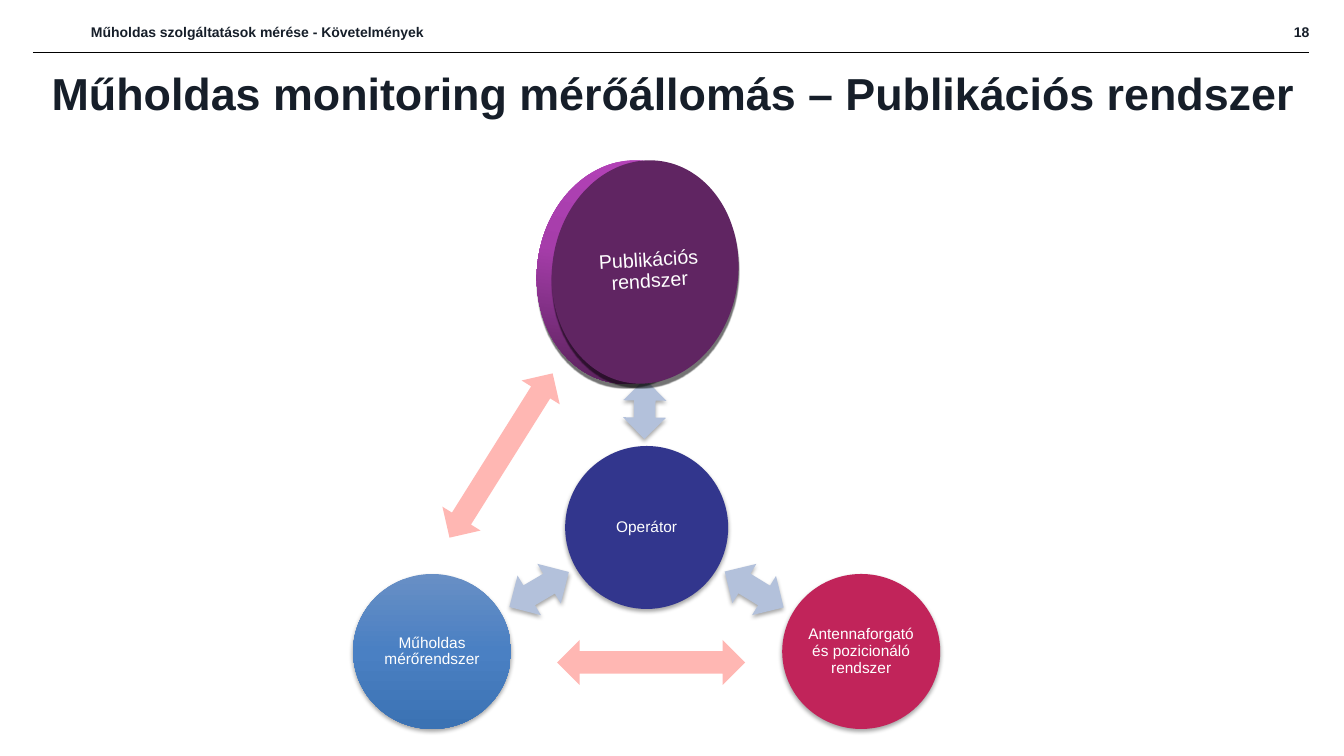
from lxml import etree
from pptx import Presentation
from pptx import util as u
from pptx.dml.color import RGBColor
from pptx.enum import shapes, text
from pptx.oxml import ns

SCALE = 914400 / 100.8  # EMU per px
FONT = "Arial"
COLORS = {
    "ink": "161E29", "rule": "000000", "white": "FFFFFF", "operator": "32368D",
    "antenna": "C1245A", "disc": "602562", "link": "B3C1DB", "flow": "FFB7B3",
}
MEASURING = [(0, "688FC5"), (50, "4A80C3"), (100, "3B72B3")]
DISC_EDGE = [(0, "B543BA"), (45, "A63DAA"), (100, "4F1E51")]
SOFT_SHADOW = {"blurRad": 39000, "dist": 23000, "alpha": 35000}
DISC_SHADOW = {"blurRad": 6000, "dist": 42000, "alpha": 55000}

presentation = Presentation()
presentation.slide_width = u.Inches(13.33)
presentation.slide_height = u.Inches(7.5)
slide = presentation.slides.add_slide(presentation.slide_layouts[6])


def add_part(kind, box, fill, shadow=None, rotation=0):
    """Add a borderless shape with a solid or gradient fill and optional shadow."""
    shape = slide.shapes.add_shape(kind, *(round(px * SCALE) for px in box))
    shape.rotation = rotation
    shape.line.fill.background()
    shape.shadow.inherit = False
    if isinstance(fill, list):
        shape.fill.gradient()
        shape.fill.gradient_angle = 270
        stops = shape.element.spPr.find(".//" + ns.qn("a:gsLst"))
        for stop in list(stops):
            stops.remove(stop)
        for position, color in fill:
            stop = etree.SubElement(stops, ns.qn("a:gs"), pos=str(position * 1000))
            etree.SubElement(stop, ns.qn("a:srgbClr"), val=color)
    else:
        shape.fill.solid()
        shape.fill.fore_color.rgb = RGBColor.from_string(COLORS[fill])
    if shadow:
        effects = shape.element.spPr.find(ns.qn("a:effectLst"))
        outer = etree.SubElement(
            effects, ns.qn("a:outerShdw"), blurRad=str(shadow["blurRad"]),
            dist=str(shadow["dist"]), dir="5400000", rotWithShape="0")
        color = etree.SubElement(outer, ns.qn("a:srgbClr"), val="000000")
        etree.SubElement(color, ns.qn("a:alpha"), val=str(shadow["alpha"]))
    return shape


def write(shape, words, size, color, align="CENTER", bold=False, margin=0, spacing=1.0):
    """Put one formatted paragraph into a shape or text box."""
    frame = shape.text_frame
    settings = {"word_wrap": True, "vertical_anchor": text.MSO_ANCHOR.MIDDLE}
    for side in ("left", "top", "right", "bottom"):
        settings["margin_" + side] = round(margin * SCALE)
    for name, value in settings.items():
        setattr(frame, name, value)
    paragraph = frame.paragraphs[0]
    paragraph.text = words
    paragraph.alignment = getattr(text.PP_ALIGN, align)
    paragraph.line_spacing = spacing
    font = paragraph.runs[0].font
    for name, value in {"name": FONT, "size": u.Pt(size), "bold": bold}.items():
        setattr(font, name, value)
    font.color.rgb = RGBColor.from_string(COLORS[color])


# Header rule
rule = slide.shapes.add_connector(
    shapes.MSO_CONNECTOR.STRAIGHT, *(round(px * SCALE) for px in (33, 53, 1309, 53)))
rule.line.color.rgb = RGBColor.from_string(COLORS["rule"])
rule.line.width = u.Pt(0.75)
etree.SubElement(rule.element.spPr, ns.qn("a:effectLst"))

# Header, page number and title
for words, box, size, align in [
    ("Műholdas szolgáltatások mérése - Követelmények", (91, 12, 454, 40), 10, "LEFT"),
    ("18", (1007, 12, 302, 40), 10, "RIGHT"),
    ("Műholdas monitoring mérőállomás – Publikációs rendszer",
     (38, 63, 1271, 60), 32, "CENTER"),
]:
    label = slide.shapes.add_textbox(*(round(px * SCALE) for px in box))
    write(label, words, size, "ink", align, bold=True)

# Double arrows: operator links and direct flows
UP_DOWN = shapes.MSO_SHAPE.UP_DOWN_ARROW
LEFT_RIGHT = shapes.MSO_SHAPE.LEFT_RIGHT_ARROW
for kind, box, rotation, fill, shadow in [
    (UP_DOWN, (623, 379, 43, 60), 0.7, "link", SOFT_SHADOW),
    (UP_DOWN, (731, 555, 46, 69), 121.4, "link", SOFT_SHADOW),
    (UP_DOWN, (516, 555, 46, 69), 59.5, "link", SOFT_SHADOW),
    (LEFT_RIGHT, (404, 433, 194, 45), 302.1, "flow", None),
    (LEFT_RIGHT, (557, 640, 188, 45), 0, "flow", None),
]:
    arrow = add_part(kind, box, fill, shadow, rotation)
    arrow.adjustments[0] = arrow.adjustments[1] = 0.5

# Round nodes
for words, box, fill in [
    ("Operátor", (565, 446, 163, 163), "operator"),
    ("Antennaforgató és pozicionáló rendszer", (782, 574, 158, 155), "antenna"),
    ("Műholdas mérőrendszer", (353, 574, 158, 155), MEASURING),
]:
    node = add_part(shapes.MSO_SHAPE.OVAL, box, fill, SOFT_SHADOW)
    write(node, words, 11, "white", margin=2, spacing=0.9)

# Tilted publication disc: edge, face and slanted label
for left, fill in [(537, DISC_EDGE), (552, "disc")]:
    add_part(shapes.MSO_SHAPE.OVAL, (left, 160, 186, 224), fill, DISC_SHADOW, 8)
disc_label = slide.shapes.add_textbox(*(round(px * SCALE) for px in (579, 241, 140, 60)))
disc_label.rotation = -3.5
write(disc_label, "Publikációs rendszer", 14, "white", spacing=0.9)

presentation.save("out.pptx")
